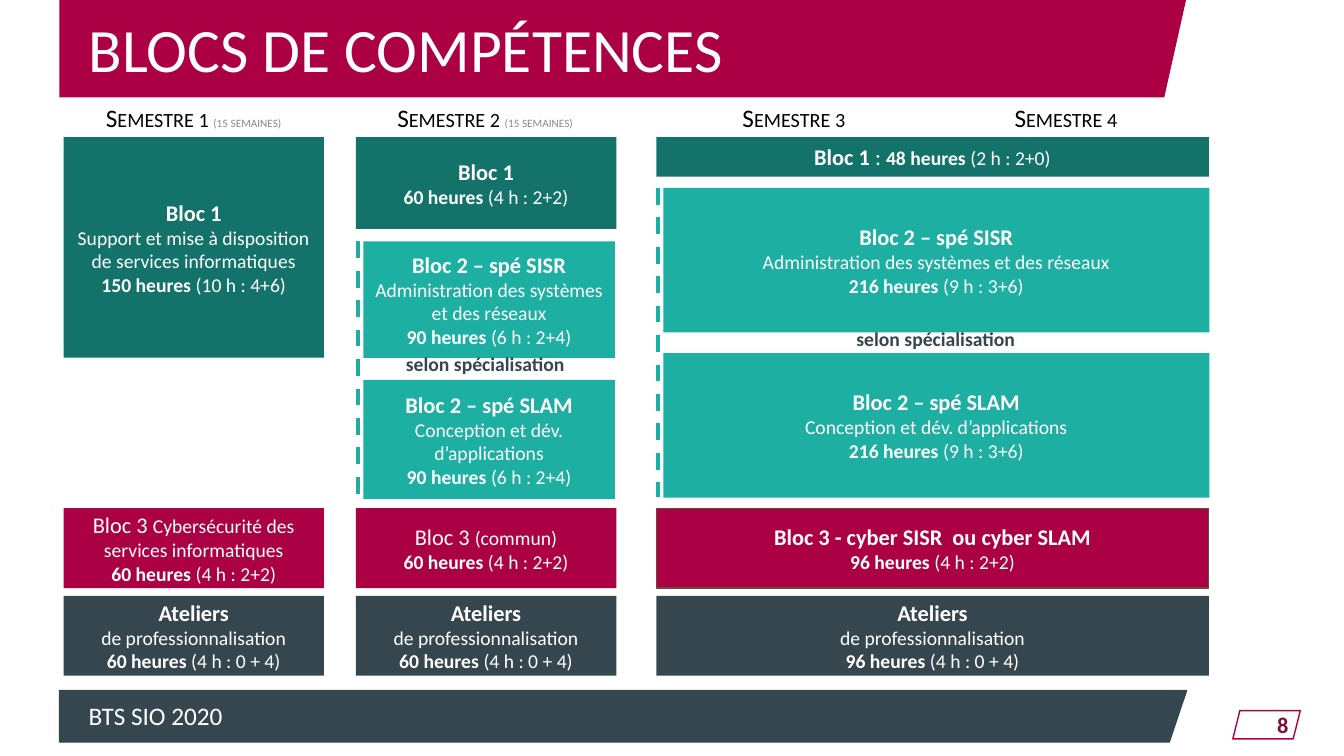
from lxml.etree import SubElement
from pptx import Presentation
from pptx.dml.color import RGBColor
from pptx.enum.dml import MSO_LINE
from pptx.enum.shapes import MSO_CONNECTOR, MSO_SHAPE
from pptx.enum.text import MSO_ANCHOR, MSO_AUTO_SIZE, PP_ALIGN
from pptx.oxml.ns import qn
from pptx.util import Pt

COLORS = {
    "white": "FFFFFF", "black": "000000", "grey": "888888",
    "green": "13726A", "teal": "1DAFA1", "red": "AB0044",
    "slate": "36464E", "wine": "800F35", "brown": "6C473B",
}


class SlideBuilder:
    font = "Calibri"

    def __init__(self, prs):
        self.s = prs.slides.add_slide(prs.slide_layouts[5])

    def color(self, name):
        return RGBColor.from_string(COLORS[name])

    def paint(self, sp, fill=None, line=None):
        sp.shadow.inherit = False
        if fill:
            sp.fill.solid()
            sp.fill.fore_color.rgb = self.color(fill)
        else:
            sp.fill.background()
        if line:
            sp.line.color.rgb = self.color(line)
            sp.line.width = Pt(1)
        else:
            sp.line.fill.background()

    def set_text(self, sp, lines, color, align=PP_ALIGN.CENTER, anchor=MSO_ANCHOR.MIDDLE, caps=False):
        tf = sp.text_frame
        frame = {
            "word_wrap": True, "auto_size": MSO_AUTO_SIZE.NONE, "vertical_anchor": anchor,
            "margin_left": Pt(7.2), "margin_right": Pt(7.2),
            "margin_top": Pt(3.6), "margin_bottom": Pt(3.6),
        }
        for key, value in frame.items():
            setattr(tf, key, value)
        for i, runs in enumerate(lines):
            p = tf.add_paragraph() if i else tf.paragraphs[0]
            p.alignment = align
            for text, size, bold, *own_color in runs:
                r = p.add_run()
                r.text = text
                style = {"name": self.font, "size": Pt(size), "bold": bold}
                for key, value in style.items():
                    setattr(r.font, key, value)
                r.font.color.rgb = self.color(own_color[0] if own_color else color)
                if caps:
                    r.font._element.set("cap", "small")

    def title(self, text, x, y, w, h):
        sp = self.s.shapes.title
        box = {"left": Pt(x), "top": Pt(y), "width": Pt(w), "height": Pt(h)}
        for key, value in box.items():
            setattr(sp, key, value)
        self.set_text(sp, [[(text, 44, False)]], "white", PP_ALIGN.LEFT)
        sp.text_frame.paragraphs[0].line_spacing = 0.9
        self.s.shapes[-1]._element.addnext(sp._element)

    def band(self, points, fill, line=None):
        start, *rest = [(Pt(x), Pt(y)) for x, y in points]
        builder = self.s.shapes.build_freeform(*start)
        builder.add_line_segments(rest, close=True)
        self.paint(builder.convert_to_shape(), fill, line)

    def shape(self, kind, x, y, w, h, adj, fill=None, line=None):
        sp = self.s.shapes.add_shape(kind, Pt(x), Pt(y), Pt(w), Pt(h))
        sp.adjustments[0] = adj
        self.paint(sp, fill, line)
        return sp

    def block(self, x, y, w, h, fill, lines, line=None):
        sp = self.shape(MSO_SHAPE.ROUNDED_RECTANGLE, x, y, w, h, 0, fill, line)
        self.set_text(sp, lines, "white")

    def label(self, x, y, w, h, runs, color, **options):
        sp = self.s.shapes.add_textbox(Pt(x), Pt(y), Pt(w), Pt(h))
        self.set_text(sp, [runs], color, **options)

    def dashes(self, x, top, bottom):
        line = self.s.shapes.add_connector(MSO_CONNECTOR.STRAIGHT, Pt(x), Pt(top), Pt(x), Pt(bottom))
        line.line.color.rgb = self.color("teal")
        line.line.width = Pt(3)
        line.line.dash_style = MSO_LINE.DASH
        SubElement(line._element.spPr, qn("a:effectLst"))


def head(text):
    return [(text, 16, True)]


def body(text):
    return [(text, 14, False)]


def hours(count, detail):
    return [(f"{count} heures ", 14, True), (f"({detail})", 14, False)]


def main():
    prs = Presentation()
    prs.slide_width, prs.slide_height = Pt(960), Pt(540)
    b = SlideBuilder(prs)

    b.band([(835.2, 530), (42.5, 530), (42.5, 493.3), (847.5, 493.3)], "slate", "slate")
    b.label(56.2, 496.8, 722, 29.5, [("BTS SIO 2020", 18, False)], "white",
            align=PP_ALIGN.LEFT, anchor=MSO_ANCHOR.TOP)
    b.band([(847.5, -1.4), (831.6, 69.6), (42.5, 69.6), (42.5, 0)], "red")
    b.title("BLOCS DE COMPÉTENCES", 56.2, 5.8, 765.4, 64)
    b.shape(MSO_SHAPE.PARALLELOGRAM, 880.6, 507.6, 48.2, 20.2, 0.25, line="red")
    b.label(867.6, 507.6, 59.8, 20.2, [("8", 16, True)], "wine", align=PP_ALIGN.RIGHT)

    top, bloc3_top, workshop_top, row_h = 98, 363, 425.6, 57
    columns = [
        (45.4, 186, 157.5, 60, None,
         [head("Bloc 1"), body("Support et mise à disposition de services informatiques"),
          hours(150, "10 h : 4+6")],
         [("Bloc 3 ", 16, False), ("Cybersécurité des services informatiques", 14, False)]),
        (254.2, 186, 65.5, 60, None,
         [head("Bloc 1"), hours(60, "4 h : 2+2")],
         [("Bloc 3 ", 16, False), ("(commun)", 14, False)]),
        (468.8, 394.6, 28.2, 96, "brown",
         [head("Bloc 1") + [(" : ", 16, False)] + hours(48, "2 h : 2+0")],
         head("Bloc 3 - cyber SISR  ou cyber SLAM")),
    ]
    for x, w, bloc1_h, total, border, bloc1, bloc3 in columns:
        b.block(x, top, w, bloc1_h, "green", bloc1)
        b.block(x, bloc3_top, w, row_h, "red", [bloc3, hours(total, "4 h : 2+2")], border)
        b.block(x, workshop_top, w, row_h, "slate",
                [head("Ateliers"), body("de professionnalisation"), hours(total, "4 h : 0 + 4")])

    tracks = [("SISR", "Administration des systèmes et des réseaux"),
              ("SLAM", "Conception et dév. d’applications")]
    choices = [
        (259.6, 179.6, [(172.4, 83.2), (271.4, 85.2)], 90, "6 h : 2+4", 277.2, 250, 255.8, 353.8),
        (473.8, 390, [(134.2, 103.2), (252.2, 103.2)], 216, "9 h : 3+6", 599, 232, 470.2, 355),
    ]
    for x, w, rows, total, detail, note_x, note_y, dash_x, dash_end in choices:
        for (y, h), (track, subject) in zip(rows, tracks):
            b.block(x, y, w, h, "teal",
                    [head(f"Bloc 2 – spé {track}"), body(subject), hours(total, detail)])
        b.label(note_x, note_y, 139, 20.2, [("selon spécialisation", 14, True)], "slate")
        b.dashes(dash_x, rows[0][0], dash_end)

    weeks = [("(15 semaines)", 10, False, "grey")]
    semesters = [(45.4, 186, weeks), (253.6, 186, weeks), (468.8, 196.6, []), (658.8, 205.2, [])]
    for number, (x, w, note) in enumerate(semesters, 1):
        name = f"Semestre {number}" + (" " if note else "")
        b.label(x, 69.8, w, 28.8, [(name, 18, False)] + note, "black",
                anchor=MSO_ANCHOR.TOP, caps=True)

    prs.save("out.pptx")


if __name__ == "__main__":
    main()
